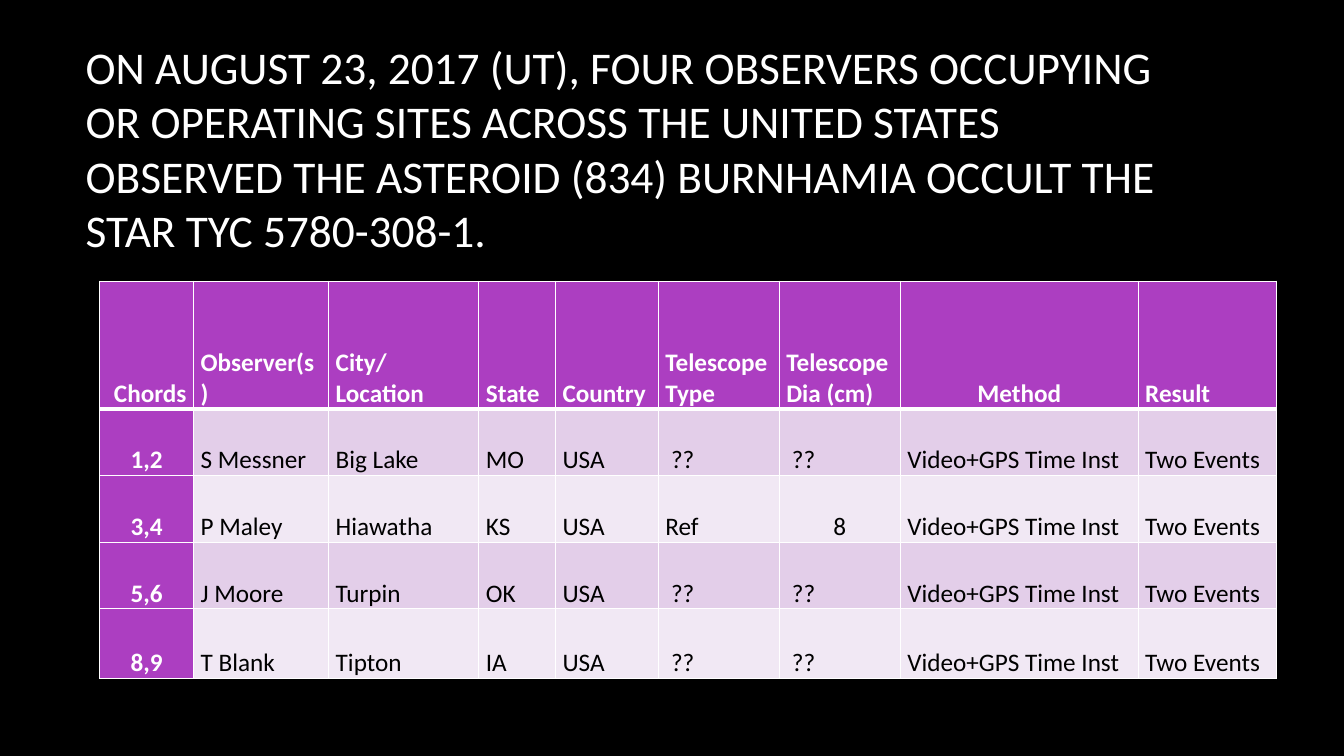
import pptx
import pptx.dml.color
import pptx.enum.text
import pptx.oxml.ns
import pptx.util
import lxml.etree

Inches = pptx.util.Inches
Align = pptx.enum.text.PP_ALIGN
Anchor = pptx.enum.text.MSO_ANCHOR

COLORS = {
    "background": "000000",
    "light": "FFFFFF",
    "dark": "000000",
    "header": "AC3EC1",
    "odd_row": "E3CEE9",
    "even_row": "F1E8F4",
}

TITLE = ("ON AUGUST 23, 2017 (UT), FOUR OBSERVERS OCCUPYING OR OPERATING SITES "
         "ACROSS THE UNITED STATES OBSERVED THE ASTEROID (834) BURNHAMIA OCCULT "
         "THE STAR TYC 5780-308-1.")

HEADERS = ["Chords", "Observer(s)", "City/Location", "State", "Country",
           "Telescope Type", "Telescope Dia (cm)", "Method", "Result"]

# Chords, observer, city, state, telescope type, telescope diameter
SIGHTINGS = [
    ("1,2", "S Messner", "Big Lake", "MO", " ??", " ??"),
    ("3,4", "P Maley", "Hiawatha", "KS", "Ref", "8"),
    ("5,6", "J Moore", "Turpin", "OK", " ??", " ??"),
    ("8,9", "T Blank", "Tipton", "IA", " ??", " ??"),
]

COLUMN_WIDTHS = [0.93, 1.34, 1.49, 0.76, 1.02, 1.2, 1.2, 2.36, 1.37]
ROW_HEIGHTS = [1.27, 0.66, 0.66, 0.66, 0.69]


class SlideBuilder:
    font = "Calibri"

    def __init__(self, deck):
        self.page = deck.slides.add_slide(deck.slide_layouts[5])
        fill = self.page.background.fill
        fill.solid()
        fill.fore_color.rgb = self.color("background")

    def color(self, name):
        return pptx.dml.color.RGBColor.from_string(COLORS[name])

    def add_text(self, frame, text, size, color, bold=False, align=Align.LEFT):
        para = frame.paragraphs[0]
        para.alignment = align
        span = para.add_run()
        span.text = text
        span.font.name = self.font
        span.font.size = pptx.util.Pt(size)
        span.font.bold = bold
        span.font.color.rgb = self.color(color)

    def title(self, text, left, top, width, height):
        box = self.page.shapes.title
        box.left, box.top = Inches(left), Inches(top)
        box.width, box.height = Inches(width), Inches(height)
        frame = box.text_frame
        frame.word_wrap = True
        frame.auto_size = pptx.enum.text.MSO_AUTO_SIZE.NONE
        frame.vertical_anchor = Anchor.MIDDLE
        self.add_text(frame, text, 32.4, "light")

    def border(self, cell, side, points):
        qn = pptx.oxml.ns.qn
        properties = cell._tc.get_or_add_tcPr()
        line = lxml.etree.SubElement(properties, qn(f"a:ln{side}"),
                                     w=str(pptx.util.Pt(points)))
        fill = lxml.etree.SubElement(line, qn("a:solidFill"))
        lxml.etree.SubElement(fill, qn("a:srgbClr"), val=COLORS["light"])

    def cell(self, cell, text, fill, color, bold, align, top, bottom):
        for side, points in (("L", 1), ("R", 1), ("T", top), ("B", bottom)):
            self.border(cell, side, points)
        cell.fill.solid()
        cell.fill.fore_color.rgb = self.color(fill)
        cell.margin_left = cell.margin_right = Inches(0.07)
        cell.margin_top = cell.margin_bottom = 0
        cell.vertical_anchor = Anchor.BOTTOM
        self.add_text(cell.text_frame, text, 18, color, bold, align)

    def table(self, rows, left, top, widths, heights, alignments):
        table = self.page.shapes.add_table(
            len(rows), len(widths), Inches(left), Inches(top),
            Inches(sum(widths)), Inches(sum(heights))).table
        for column, width in zip(table.columns, widths):
            column.width = Inches(width)
        for row, height in zip(table.rows, heights):
            row.height = Inches(height)
        for r, values in enumerate(rows):
            for c, text in enumerate(values):
                heading = r == 0 or c == 0
                band = "odd_row" if r % 2 else "even_row"
                self.cell(table.cell(r, c), text,
                          fill="header" if heading else band,
                          color="light" if heading else "dark",
                          bold=heading,
                          align=alignments.get((r, c), Align.LEFT),
                          top=3 if r == 1 else 1,
                          bottom=3 if r == 0 else 1)


def main():
    deck = pptx.Presentation()
    deck.slide_width, deck.slide_height = Inches(13.33), Inches(7.5)
    slide = SlideBuilder(deck)

    # Title
    slide.title(TITLE, 0.75, 0.67, 11.08, 1.59)

    # Observer table: country, method and result are the same for everyone
    rows = [HEADERS]
    for chords, observer, city, state, kind, diameter in SIGHTINGS:
        rows.append([chords, observer, city, state, "USA", kind, diameter,
                     "Video+GPS Time Inst", "Two Events"])
    alignments = {(r, 0): Align.CENTER for r in range(1, len(rows))}
    alignments.update({(0, 0): Align.RIGHT, (0, 7): Align.CENTER,
                       (2, 6): Align.CENTER})
    slide.table(rows, 0.99, 2.79, COLUMN_WIDTHS, ROW_HEIGHTS, alignments)

    deck.save("out.pptx")


if __name__ == "__main__":
    main()
